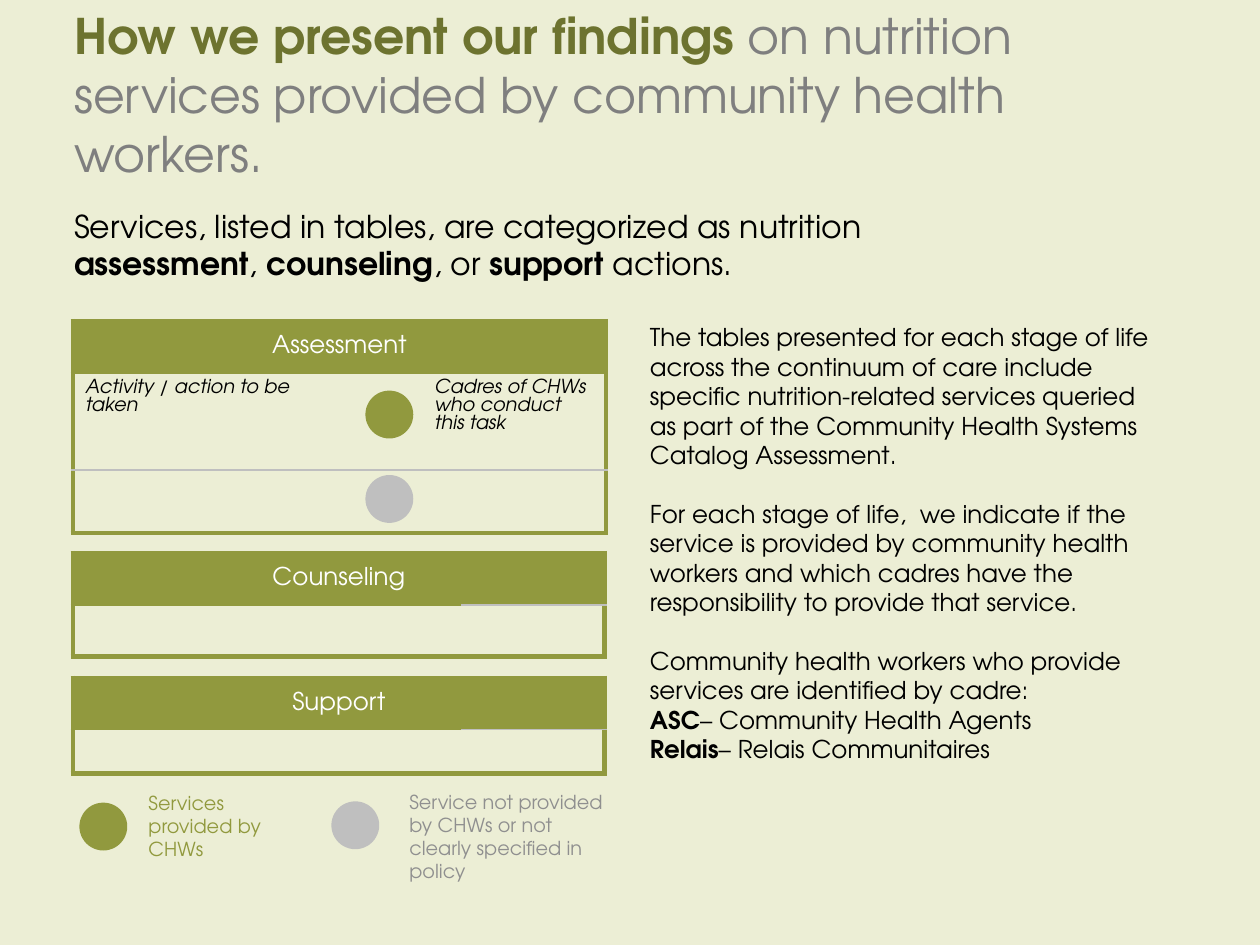
from lxml import etree
from pptx import Presentation
from pptx import util as u
from pptx.dml.color import RGBColor
from pptx.enum import shapes, text
from pptx.oxml.ns import qn

FONT = "TeX Gyre Adventor"
GREEN, GRAY, BLACK, WHITE = "91993E", "BFBFBF", "000000", "FFFFFF"
MID = text.MSO_ANCHOR.MIDDLE

# Runs are (words, bold) or (words, bold, colour)
TITLE = [[("How we present our findings ", True, "6D732F"),
          ("on nutrition services provided by community health workers.",
           False, "7F7F7F")]]
INTRO = [[("Services, listed in tables, are categorized as nutrition ", False),
          ("assessment", True), (", ", False), ("counseling", True),
          (", or ", False), ("support ", True), ("actions.", False)]]
BODY = [
    [("The tables presented for each stage of life across the continuum of "
      "care include specific nutrition-related services queried as part of "
      "the Community Health Systems Catalog Assessment.", False)],
    [("For each stage of life,  we indicate if the service is provided by "
      "community health workers and which cadres have the responsibility to "
      "provide that service.", False)],
    [("Community health workers who provide services are identified by "
      "cadre:", False)],
    [("ASC", True), ("– Community Health Agents", False)],
    [("Relais", True), ("– Relais Communitaires", False)],
]
# Box, paragraphs, size, colour, space before by paragraph, format
TEXTS = [
    ((0.49, 0.4, 8.76, 0.69), TITLE, 28, BLACK, {}, {"vertical_anchor": MID}),
    ((0.49, 1.59, 7.76, 0.71), INTRO, 18, BLACK, {}, {}),
    ((5.06, 2.51, 4.19, 3.64), BODY, 14, BLACK, {1: 16.8, 2: 16.8}, {}),
    ((1.08, 6.23, 1.35, 0.66), [[("Services provided by CHWs", False)]],
     11, GREEN, {}, {}),
    ((3.15, 6.22, 1.75, 0.66),
     [[("Service not provided by CHWs or not clearly specified in policy",
        False)]], 11, "8F8F8F", {}, {}),
]
# Heading, top, columns, rows, line colour under the heading's last column, notes
TABLES = [
    ("Assessment", 2.55, (2.27, 0.5, 1.46), (0.41, 0.77, 0.5), GREEN,
     {(1, 0): "Activity / action to be taken",
      (1, 2): "Cadres of CHWs who conduct this task"}),
    ("Counseling", 4.39, (3.08, 1.14), (0.41, 0.41), GRAY, {}),
    ("Support", 5.38, (3.08, 1.14), (0.41, 0.35), GRAY, {}),
]
LEFT, WIDE, DOT = 0.58, 4.22, 0.38
DOTS = [(2.9, 3.1, GREEN), (2.9, 3.77, GRAY),
        (0.63, 6.37, GREEN), (2.63, 6.36, GRAY)]


def rgb(code):
    return RGBColor.from_string(code)


def inch(box):
    return [u.Inches(n) for n in box]


def write(para, words, size, color, bold=False, italic=False):
    run = para.add_run()
    run.text = words
    look = {"name": FONT, "size": u.Pt(size), "bold": bold, "italic": italic}
    for key, value in look.items():
        setattr(run.font, key, value)
    run.font.color.rgb = rgb(color)


def add_text(slide, box, paras, size, color, gaps, form):
    frame = slide.shapes.add_textbox(*inch(box)).text_frame
    for key, value in {"word_wrap": True, **form}.items():
        setattr(frame, key, value)
    for i, runs in enumerate(paras):
        para = frame.add_paragraph() if i else frame.paragraphs[0]
        para.space_before = u.Pt(gaps.get(i, 0))
        for words, bold, *tint in runs:
            write(para, words, size, tint[0] if tint else color, bold)


def edge(cell, lines):
    """Draw the cell's sides; a side without a line is left open."""
    props = cell._tc.get_or_add_tcPr()
    for i, side in enumerate("LRTB"):
        line = etree.Element(qn(f"a:ln{side}"))
        if side in lines:
            color, width = lines[side]
            line.set("w", str(u.Pt(width)))
            fill = etree.SubElement(line, qn("a:solidFill"))
            etree.SubElement(fill, qn("a:srgbClr"), val=color)
        else:
            etree.SubElement(line, qn("a:noFill"))
        props.insert(i, line)


def sides(row, col, rows, cols, seam):
    lines = {}
    if col == 0 or row == 0:
        lines["L"] = (GREEN, 3)
    if col == cols - 1 or row == 0:
        lines["R"] = (GREEN, 3)
    under = seam if col == cols - 1 else GREEN
    lines["T"] = {0: (GREEN, 3), 1: (under, 1)}.get(row, (GRAY, 1))
    if row == rows - 1:
        lines["B"] = (GREEN, 3)
    else:
        lines["B"] = (GRAY if row else under, 1)
    return lines


def add_grid(slide, head, top, cols, rows, seam, notes):
    box = inch((LEFT, top, WIDE, sum(rows)))
    table = slide.shapes.add_table(len(rows), len(cols), *box).table
    table.first_row = table.horz_banding = False
    for col, width in zip(table.columns, cols):
        col.width = u.Inches(width)
    for row, height in zip(table.rows, rows):
        row.height = u.Inches(height)
    for r in range(len(rows)):
        for c in range(len(cols)):
            cell = table.cell(r, c)
            para = cell.text_frame.paragraphs[0]
            if r == 0:
                cell.fill.solid()
                cell.fill.fore_color.rgb = rgb(GREEN)
            else:
                cell.fill.background()
            if (r, c) in notes:
                write(para, notes[r, c], 11, BLACK, italic=True)
            elif (r, c) == (0, 0):
                cell.vertical_anchor = MID
                para.alignment = text.PP_ALIGN.CENTER
                write(para, head, 14, WHITE)
            else:
                etree.SubElement(para._p, qn("a:endParaRPr"), sz="1100")
            edge(cell, sides(r, c, len(rows), len(cols), seam))
    table.cell(0, 0).merge(table.cell(0, len(cols) - 1))


def add_dot(slide, left, top, color):
    dot = slide.shapes.add_shape(shapes.MSO_SHAPE.OVAL,
                                 *inch((left, top, DOT, DOT)))
    dot.shadow.inherit = False
    dot.fill.solid()
    dot.fill.fore_color.rgb = rgb(color)
    dot.line.fill.background()


def main():
    deck = Presentation()
    deck.slide_width, deck.slide_height = inch((10, 7.5))
    slide = deck.slides.add_slide(deck.slide_layouts[6])
    slide.background.fill.solid()
    slide.background.fill.fore_color.rgb = rgb("ECEED5")
    for add, items in ((add_grid, TABLES), (add_dot, DOTS), (add_text, TEXTS)):
        for item in items:
            add(slide, *item)
    deck.save("out.pptx")


if __name__ == "__main__":
    main()
